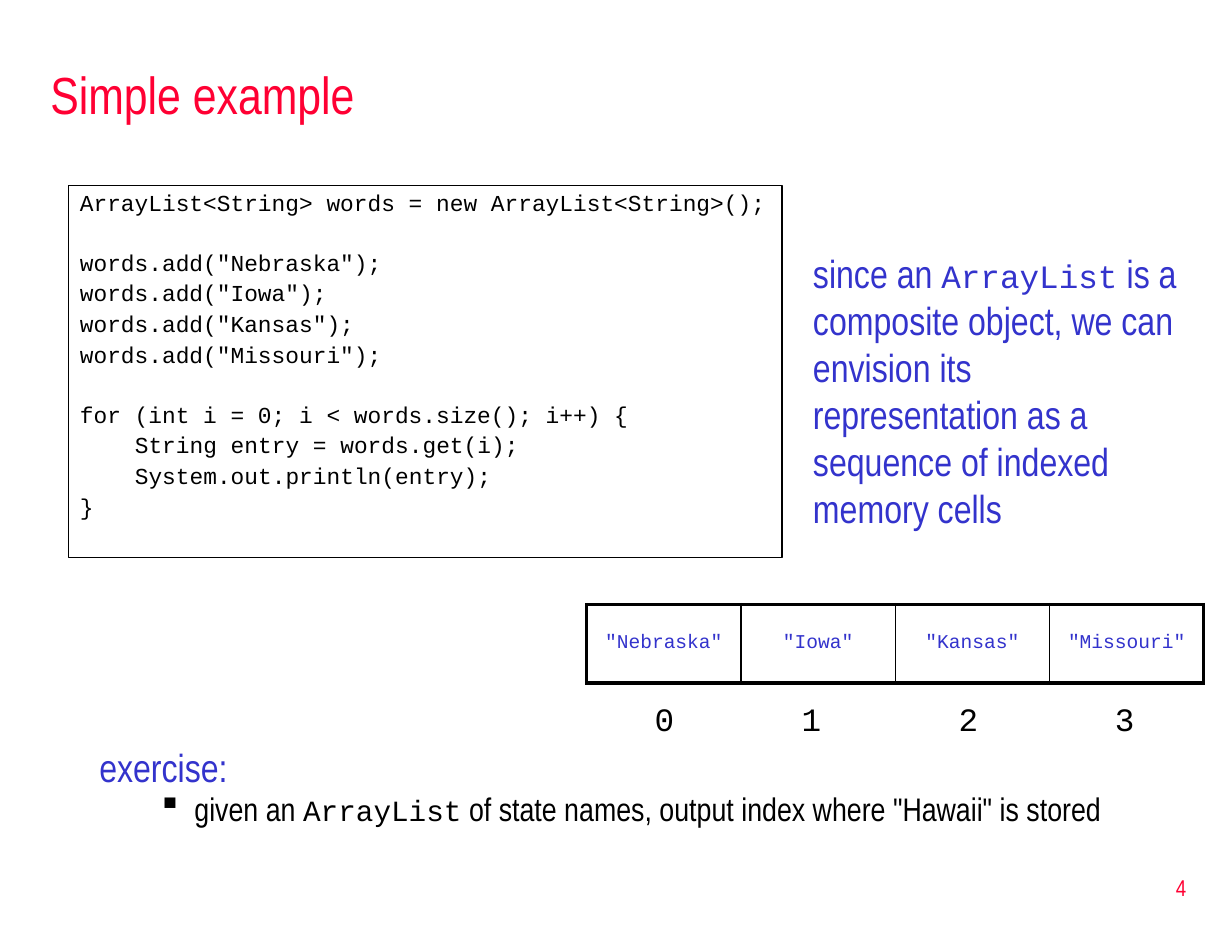
from pptx import Presentation, util as u
from pptx.dml.color import RGBColor
from pptx.enum import shapes, text
from pptx.oxml import parse_xml
from pptx.oxml.ns import nsdecls

RED = RGBColor(0xFF, 0x00, 0x33)
BLUE = RGBColor(0x33, 0x33, 0xCC)
BLACK = RGBColor(0, 0, 0)
SANS, MONO = "Arial Narrow", "Courier New"
LEFT, MID, RIGHT = text.PP_ALIGN.LEFT, text.PP_ALIGN.CENTER, text.PP_ALIGN.RIGHT

CODE = [
    ['ArrayList<String> words = new ArrayList<String>();'],
    ['words.add("Nebraska");', 'words.add("Iowa");',
     'words.add("Kansas");', 'words.add("Missouri");'],
    ['for (int i = 0; i < words.size(); i++) {',
     '\tString entry = words.get(i);',
     '\tSystem.out.println(entry);', '}'],
]
STATES = ["Nebraska", "Iowa", "Kansas", "Missouri"]


def write(para, words, size=24, font=SANS, color=BLACK, align=LEFT,
          before=0, line=None):
    para.alignment = align
    para.space_before = u.Pt(before)
    if line:
        para.line_spacing = line
    run = para.add_run()
    run.text = words
    run.font.size = u.Pt(size)
    run.font.name = font
    run.font.color.rgb = color


def indent(para, left, first, mark=None):
    props = para._p.get_or_add_pPr()
    props.set("marL", str(u.Cm(left)))
    props.set("indent", str(u.Cm(first)))
    if mark:
        props.append(parse_xml(f'<a:buChar {nsdecls("a")} char="{mark}"/>'))


def add_box(slide, x, y, w, h, middle=False):
    box = slide.shapes.add_textbox(u.Cm(x), u.Cm(y), u.Cm(w), u.Cm(h))
    frame = box.text_frame
    frame.word_wrap = True
    if middle:
        frame.vertical_anchor = text.MSO_ANCHOR.MIDDLE
    return frame


def add_code(slide, x, y, w, h):
    box = slide.shapes.add_shape(shapes.MSO_SHAPE.RECTANGLE,
                                 u.Cm(x), u.Cm(y), u.Cm(w), u.Cm(h))
    box.shadow.inherit = False
    box.fill.background()
    box.line.color.rgb = BLACK
    box.line.width = u.Pt(0.75)
    frame = box.text_frame
    frame.word_wrap = True
    frame.vertical_anchor = text.MSO_ANCHOR.TOP
    para = frame.paragraphs[0]
    for b, block in enumerate(CODE):
        for n, line in enumerate(block):
            if b or n:
                para = frame.add_paragraph()
            gap = 21.6 if b and not n else 3.7
            write(para, line.strip(), size=14, font=MONO, before=gap, line=0.9)
            if line.startswith("\t"):
                indent(para, 1.19, 0)


def add_edge(cell, side, width):
    cell._tc.get_or_add_tcPr().append(parse_xml(
        f'<a:{side} {nsdecls("a")} w="{u.Pt(width)}"><a:solidFill>'
        f'<a:srgbClr val="{BLACK}"/></a:solidFill></a:{side}>'))


def add_cells(slide, x, y, w, h):
    last = len(STATES) - 1
    table = slide.shapes.add_table(1, len(STATES), u.Cm(x), u.Cm(y),
                                   u.Cm(w), u.Cm(h)).table
    table.first_row = table.horz_banding = False
    for i, state in enumerate(STATES):
        cell = table.cell(0, i)
        cell.vertical_anchor = text.MSO_ANCHOR.MIDDLE
        add_edge(cell, "lnL", 1 if i else 2.25)
        add_edge(cell, "lnR", 1 if i < last else 2.25)
        add_edge(cell, "lnT", 2.25)
        add_edge(cell, "lnB", 2.25)
        cell.fill.background()
        write(cell.text_frame.paragraphs[0], f'"{state}"', size=12, font=MONO,
              color=BLUE, align=MID)


def add_task(slide, x, y, w, h):
    frame = add_box(slide, x, y, w, h)
    head = frame.paragraphs[0]
    write(head, "exercise:", color=BLUE, before=4.8, line=0.9)
    indent(head, 0.95, -0.95)
    item = frame.add_paragraph()
    item.level = 1
    form = dict(before=5, line=0.7)
    write(item, "given an ", size=20, **form)
    write(item, "ArrayList", size=18, font=MONO, **form)
    write(item, ' of state names, output index where "Hawaii" is stored',
          size=20, **form)
    indent(item, 2.06, -0.79, "▪")


def add_note(slide, x, y, w, h):
    para = add_box(slide, x, y, w, h).paragraphs[0]
    write(para, "since an ", color=BLUE)
    write(para, "ArrayList", size=20, font=MONO, color=BLUE)
    write(para, " is a composite object, we can envision its representation"
          " as a sequence of indexed memory cells", color=BLUE)


def main():
    deck = Presentation()
    deck.slide_width, deck.slide_height = u.Cm(26.67), u.Cm(20.32)
    slide = deck.slides.add_slide(deck.slide_layouts[6])
    page = add_box(slide, 20.37, 18.52, 5.56, 1.35, middle=True)
    write(page.paragraphs[0], "4", size=14, color=RED, align=RIGHT)
    title = add_box(slide, 0.84, 1.07, 25.2, 1.9, middle=True)
    write(title.paragraphs[0], "Simple example", size=32, color=RED)
    add_code(slide, 1.48, 4.02, 15.45, 8.05)
    add_task(slide, 1.9, 16.08, 24.18, 2.11)
    add_cells(slide, 12.7, 13.08, 13.36, 1.7)
    add_note(slide, 17.35, 5.28, 8.46, 6.35)
    for i, x in enumerate([12.9, 16.08, 19.48, 22.86]):
        index = add_box(slide, x, 14.99, 2.97, 1.09)
        write(index.paragraphs[0], str(i), size=20, font=MONO, align=MID,
              before=4)
    deck.save("out.pptx")


if __name__ == "__main__":
    main()
